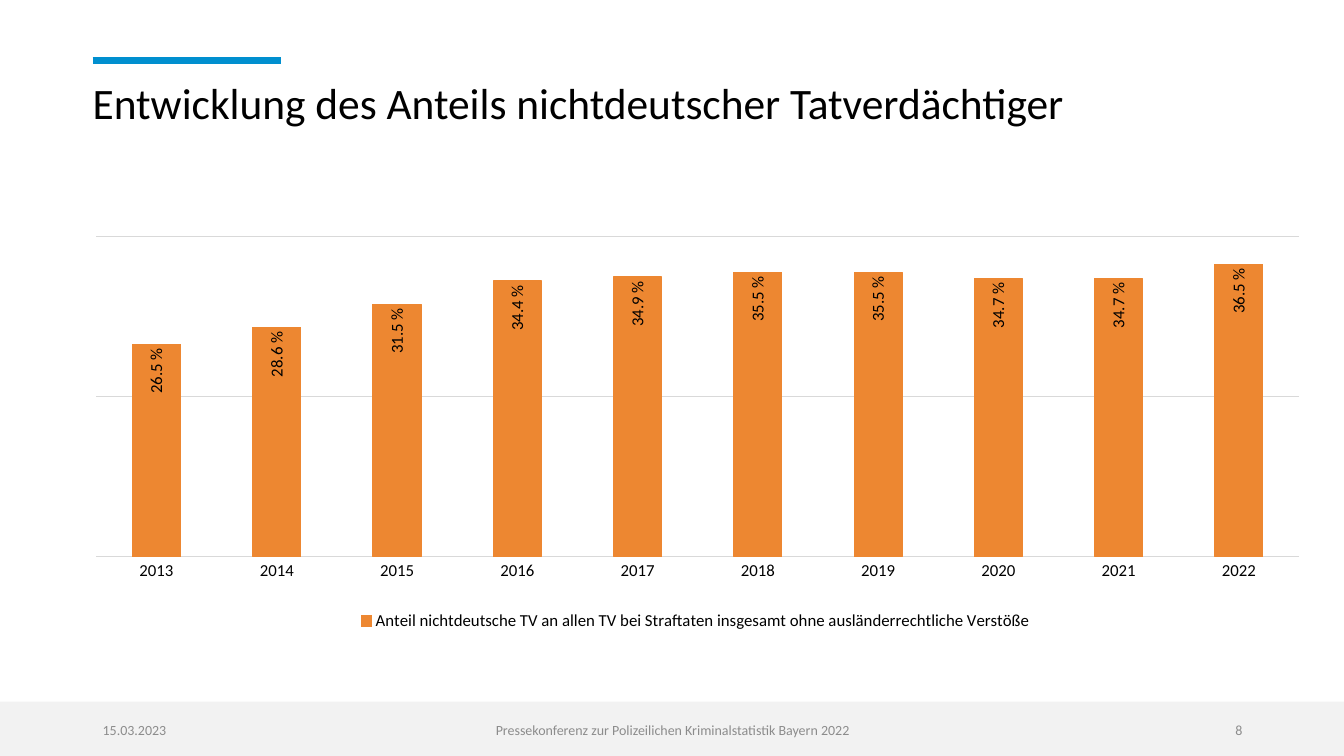
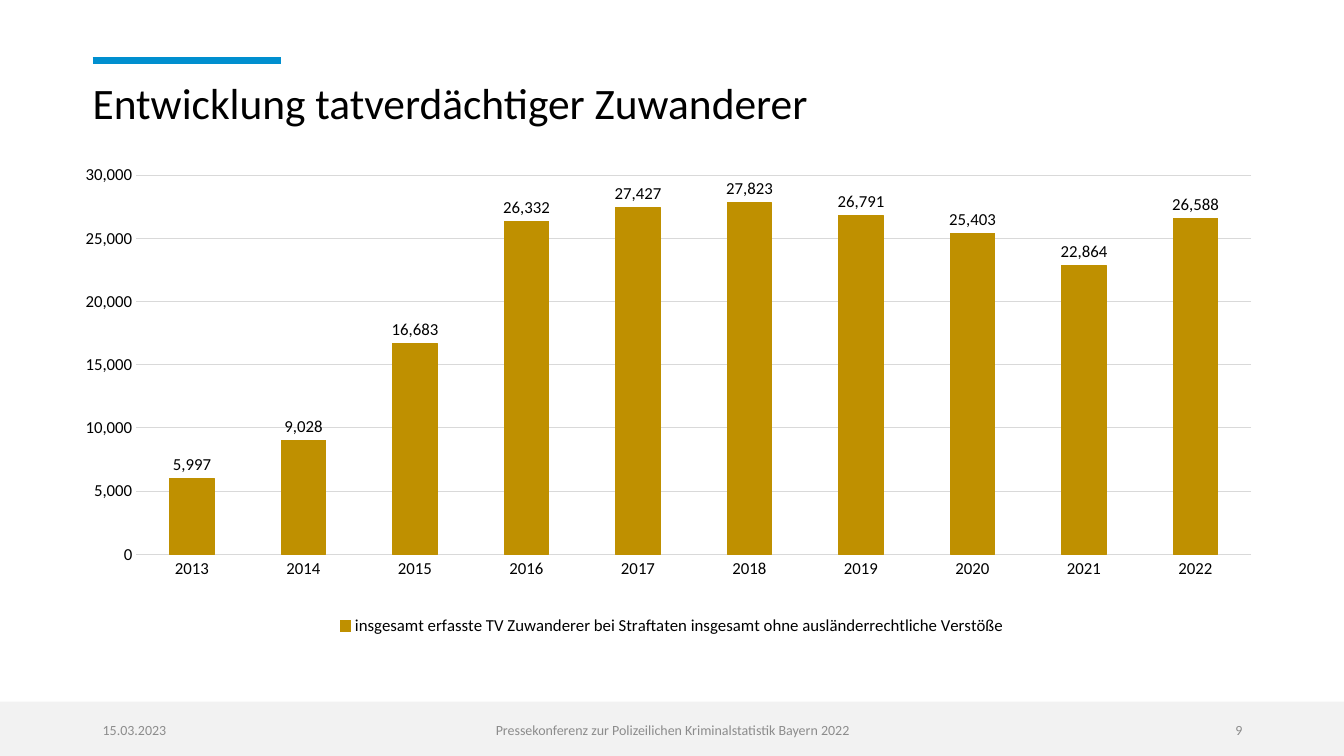
import pptx
import pptx.chart.data
import pptx.dml.color
import pptx.enum.chart
import pptx.enum.shapes
import pptx.enum.text
import pptx.oxml.ns
import pptx.oxml.xmlchemy
import pptx.util

Inches = pptx.util.Inches
Pt = pptx.util.Pt
Align = pptx.enum.text.PP_ALIGN
Anchor = pptx.enum.text.MSO_ANCHOR
Labels = pptx.enum.chart.XL_LABEL_POSITION
Ticks = pptx.enum.chart.XL_TICK_LABEL_POSITION
qn = pptx.oxml.ns.qn
make = pptx.oxml.xmlchemy.OxmlElement

FONT = "Calibri"
BLACK, GREY, BAND, BLUE, GRID = "000000", "8C8C8C", "F2F2F2", "008FCF", "D9D9D9"
LEFT = 0.92
DATE = "15.03.2023"
EVENT = "Pressekonferenz zur Polizeilichen Kriminalstatistik Bayern 2022"
YEARS = [str(year) for year in range(2013, 2023)]

SLIDES = [
    {
        "title": "Entwicklung des Anteils nichtdeutscher Tatverdächtiger",
        "page": "8",
        "box": (LEFT, 1.53, 11.97, 4.77),
        "plot": (0.003, 0.004, 0.997, 0.833),
        "name": "Anteil nichtdeutsche TV an allen TV bei Straftaten insgesamt "
                "ohne ausländerrechtliche Verstöße",
        "values": [26.5, 28.6, 31.5, 34.4, 34.9, 35.5, 35.5, 34.7, 34.7, 36.5],
        "color": "ED8731",
        "format": '#,##0.0" %"',
        "labels": Labels.INSIDE_END,
        "turn": -90,
        "ticks": Ticks.NONE,
        "scale": (0, 50, 20),
    },
    {
        "title": "Entwicklung tatverdächtiger Zuwanderer",
        "page": "9",
        "box": (0.8, 1.58, 11.74, 4.77),
        "plot": (0.047, 0.033, 0.942, 0.789),
        "name": "insgesamt erfasste TV Zuwanderer bei Straftaten insgesamt "
                "ohne ausländerrechtliche Verstöße",
        "values": [5997, 9028, 16683, 26332, 27427, 27823, 26791, 25403, 22864, 26588],
        "color": "BF9000",
        "format": "#,##0",
        "labels": Labels.OUTSIDE_END,
        "turn": 0,
        "ticks": Ticks.NEXT_TO_AXIS,
        "scale": (0, 30000, 5000),
    },
]


def rgb(color):
    return pptx.dml.color.RGBColor.from_string(color)


def paint(fill, color):
    fill.solid()
    fill.fore_color.rgb = rgb(color)


def rule(line, color, width=0.75):
    paint(line.fill, color)
    line.width = Pt(width)


def style(font, size, color=BLACK):
    font.name = FONT
    font.size = Pt(size)
    font.color.rgb = rgb(color)


def write(slide, box, text, size, color, align=Align.LEFT, anchor=Anchor.MIDDLE):
    shape = slide.shapes.add_textbox(*map(Inches, box))
    frame = shape.text_frame
    frame.word_wrap = True
    frame.vertical_anchor = anchor
    para = frame.paragraphs[0]
    para.text = text
    para.alignment = align
    style(para.font, size, color)
    return frame


def add_frame(slide, title, page):
    band = slide.shapes.add_shape(
        pptx.enum.shapes.MSO_SHAPE.RECTANGLE,
        Inches(0), Inches(6.96), Inches(13.33), Inches(0.54))
    band.shadow.inherit = False
    paint(band.fill, BAND)
    band.line.fill.background()

    accent = slide.shapes.add_connector(
        pptx.enum.shapes.MSO_CONNECTOR.STRAIGHT,
        Inches(LEFT), Inches(0.6), Inches(2.79), Inches(0.6))
    rule(accent.line, BLUE, 5)
    accent._element.spPr.append(make("a:effectLst"))

    head = write(slide, (LEFT, 0.76, 11.5, 1.2), title, 31, BLACK, anchor=Anchor.TOP)
    head.margin_left = 0
    head.paragraphs[0].line_spacing = 0.9

    for left, width, text, align in (
        (LEFT, 3, DATE, Align.LEFT),
        (4.42, 4.5, EVENT, Align.CENTER),
        (9.42, 3, page, Align.RIGHT),
    ):
        write(slide, (left, 7.04, width, 0.4), text, 10, GREY, align)


def place_plot(chart, plot):
    area = chart._chartSpace.find(".//" + qn("c:plotArea"))
    for old in area.findall(qn("c:layout")):
        area.remove(old)
    layout = make("c:layout")
    manual = make("c:manualLayout")
    layout.append(manual)
    items = [("layoutTarget", "inner"), ("xMode", "edge"), ("yMode", "edge")]
    for tag, value in items + list(zip("xywh", plot)):
        item = make("c:" + tag)
        item.set("val", str(value))
        manual.append(item)
    area.insert(0, layout)


def add_bars(slide, item):
    data = pptx.chart.data.CategoryChartData()
    data.categories = YEARS
    data.add_series(item["name"], item["values"])
    chart = slide.shapes.add_chart(
        pptx.enum.chart.XL_CHART_TYPE.COLUMN_CLUSTERED,
        *map(Inches, item["box"]), data).chart
    style(chart.font, 12)
    chart.has_title = False
    chart.has_legend = True
    chart.legend.position = pptx.enum.chart.XL_LEGEND_POSITION.BOTTOM
    chart.legend.include_in_layout = False
    style(chart.legend.font, 12)
    place_plot(chart, item["plot"])

    years, scale = chart.category_axis, chart.value_axis
    for axis in (years, scale):
        axis.major_tick_mark = pptx.enum.chart.XL_TICK_MARK.NONE
        axis.minor_tick_mark = pptx.enum.chart.XL_TICK_MARK.NONE
        style(axis.tick_labels.font, 12)
    rule(years.format.line, GRID)
    scale.format.line.fill.background()
    scale.has_major_gridlines = True
    rule(scale.major_gridlines.format.line, GRID)
    scale.minimum_scale, scale.maximum_scale, scale.major_unit = item["scale"]
    scale.tick_label_position = item["ticks"]
    scale.tick_labels.number_format = item["format"]
    scale.tick_labels.number_format_is_linked = False

    plot = chart.plots[0]
    plot.gap_width = 150
    plot.vary_by_categories = False
    bars = plot.series[0]
    paint(bars.format.fill, item["color"])
    rule(bars.format.line, item["color"])

    labels = bars.data_labels
    labels.show_value = True
    labels.position = item["labels"]
    labels.number_format = item["format"]
    labels.number_format_is_linked = False
    style(labels.font, 12)
    body = labels._element.find(".//" + qn("a:bodyPr"))
    body.set("rot", str(item["turn"] * 60000))
    body.set("vert", "horz")


def main():
    deck = pptx.Presentation()
    deck.slide_width, deck.slide_height = Inches(13.33), Inches(7.5)
    for item in SLIDES:
        slide = deck.slides.add_slide(deck.slide_layouts[6])
        add_frame(slide, item["title"], item["page"])
        add_bars(slide, item)
    deck.save("out.pptx")


if __name__ == "__main__":
    main()
